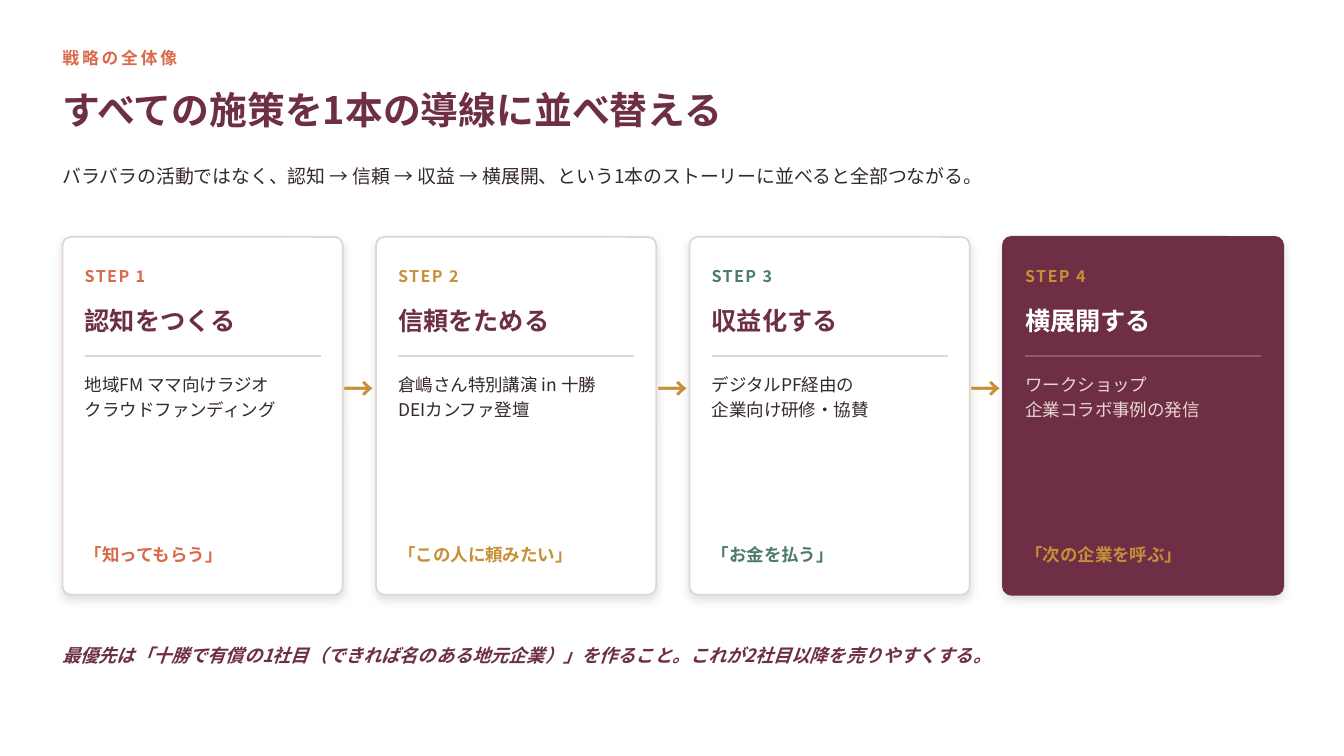
from lxml import etree
from pptx import Presentation
from pptx.dml.color import RGBColor
from pptx.enum.shapes import MSO_CONNECTOR, MSO_SHAPE
from pptx.enum.text import MSO_ANCHOR, PP_ALIGN
from pptx.oxml.ns import qn
from pptx.util import Pt

ROUNDED = MSO_SHAPE.ROUNDED_RECTANGLE
STRAIGHT = MSO_CONNECTOR.STRAIGHT
TOP, MIDDLE = MSO_ANCHOR.TOP, MSO_ANCHOR.MIDDLE
LEFT, CENTER = PP_ALIGN.LEFT, PP_ALIGN.CENTER
FONT = "Noto Sans CJK JP"
COLORS = {
    "plum": "6D2E46", "coral": "D9694A", "gold": "C79038", "green": "4C7A6E",
    "ink": "352730", "sand": "E4D6CE", "mauve": "8A5A6C", "blush": "EAD7CF",
    "white": "FFFFFF", "black": "000000",
}


def color(name):
    return RGBColor.from_string(COLORS[name])


def add_text(left, top, width, height, lines, size, tone, bold=False, italic=False,
             tracking=0, anchor=MIDDLE, align=LEFT, leading=None):
    frame = slide.shapes.add_textbox(Pt(left), Pt(top), Pt(width), Pt(height)).text_frame
    frame.word_wrap = True
    frame.vertical_anchor = anchor
    frame.margin_left = frame.margin_right = frame.margin_top = frame.margin_bottom = 0
    for index, line in enumerate(lines):
        paragraph = frame.add_paragraph() if index else frame.paragraphs[0]
        paragraph.alignment = align
        paragraph.line_spacing = leading
        run = paragraph.add_run()
        run.text = line
        run.font.size = Pt(size)
        run.font.bold = bold
        run.font.italic = italic
        run.font.color.rgb = color(tone)
        run.font.name = FONT
        properties = run.font._element
        etree.SubElement(properties, qn("a:ea"), typeface=FONT)
        if tracking:
            properties.set("spc", str(tracking * 100))


presentation = Presentation()
presentation.slide_width = Pt(960)
presentation.slide_height = Pt(540)
slide = presentation.slides.add_slide(presentation.slide_layouts[6])
slide.background.fill.solid()
slide.background.fill.fore_color.rgb = color("white")

MARGIN, CONTENT_WIDTH = 44.64, 870.48
CARD_TOP, CARD_WIDTH, CARD_HEIGHT, CARD_PITCH = 169.2, 200.16, 255.6, 223.92
PADDING, INNER_WIDTH, RULE_TOP, RULE_WIDTH = 15.84, 171.36, 254.16, 168.48

add_text(MARGIN, 30.24, 792, 21.6, ["戦略の全体像"], 12, "coral", bold=True, tracking=2)
add_text(MARGIN, 51.84, CONTENT_WIDTH, 51.84, ["すべての施策を1本の導線に並べ替える"],
         27, "plum", bold=True)
add_text(MARGIN, 111.6, CONTENT_WIDTH, 28.8,
         ["バラバラの活動ではなく、認知 → 信頼 → 収益 → 横展開、という1本のストーリーに並べると全部つながる。"],
         13.5, "ink")

LIGHT = ("white", "sand", "plum", "sand", "ink")
DARK = ("plum", "plum", "white", "mauve", "blush")
steps = [
    ("認知をつくる", ["地域FM ママ向けラジオ", "クラウドファンディング"], "「知ってもらう」", "coral", LIGHT),
    ("信頼をためる", ["倉嶋さん特別講演 in 十勝", "DEIカンファ登壇"], "「この人に頼みたい」", "gold", LIGHT),
    ("収益化する", ["デジタルPF経由の", "企業向け研修・協賛"], "「お金を払う」", "green", LIGHT),
    ("横展開する", ["ワークショップ", "企業コラボ事例の発信"], "「次の企業を呼ぶ」", "gold", DARK),
]

for number, (heading, actions, goal, accent, palette) in enumerate(steps, start=1):
    card_fill, border, heading_tone, rule_tone, body_tone = palette
    card_left = MARGIN + (number - 1) * CARD_PITCH
    inner_left = card_left + PADDING

    card = slide.shapes.add_shape(ROUNDED, Pt(card_left), Pt(CARD_TOP),
                                  Pt(CARD_WIDTH), Pt(CARD_HEIGHT))
    card.adjustments[0] = 0.03
    card.fill.solid()
    card.fill.fore_color.rgb = color(card_fill)
    card.line.color.rgb = color(border)
    card.line.width = Pt(1.25)
    card.shadow.inherit = False
    effects = card._element.spPr.find(qn("a:effectLst"))
    shadow = etree.SubElement(effects, qn("a:outerShdw"), blurRad=str(Pt(7)),
                              dist=str(Pt(3)), dir="5400000", algn="ctr", rotWithShape="0")
    shadow_tone = etree.SubElement(shadow, qn("a:srgbClr"), val=COLORS["black"])
    etree.SubElement(shadow_tone, qn("a:alpha"), val="12000")

    add_text(inner_left, 186.48, INNER_WIDTH, 21.6, [f"STEP {number}"],
             11.5, accent, bold=True, tracking=1)
    add_text(inner_left, 210.96, INNER_WIDTH, 36, [heading], 18, heading_tone, bold=True)

    rule = slide.shapes.add_connector(STRAIGHT, Pt(inner_left), Pt(RULE_TOP),
                                      Pt(inner_left + RULE_WIDTH), Pt(RULE_TOP))
    rule.line.color.rgb = color(rule_tone)
    rule.line.width = Pt(1)
    etree.SubElement(rule._element.spPr, qn("a:effectLst"))

    add_text(inner_left, 264.24, INNER_WIDTH, 108, actions, 12.5, body_tone,
             anchor=TOP, leading=1.2)
    add_text(inner_left, 380.16, INNER_WIDTH, 32.4, [goal], 12.5, accent, bold=True)

    if number < len(steps):
        add_text(card_left + 196.56, 255.6, 30.96, 43.2, ["→"], 22, "gold",
                 bold=True, align=CENTER)

add_text(MARGIN, 450, CONTENT_WIDTH, 36,
         ["最優先は「十勝で有償の1社目（できれば名のある地元企業）」を作ること。これが2社目以降を売りやすくする。"],
         13, "plum", bold=True, italic=True)

presentation.save("out.pptx")
